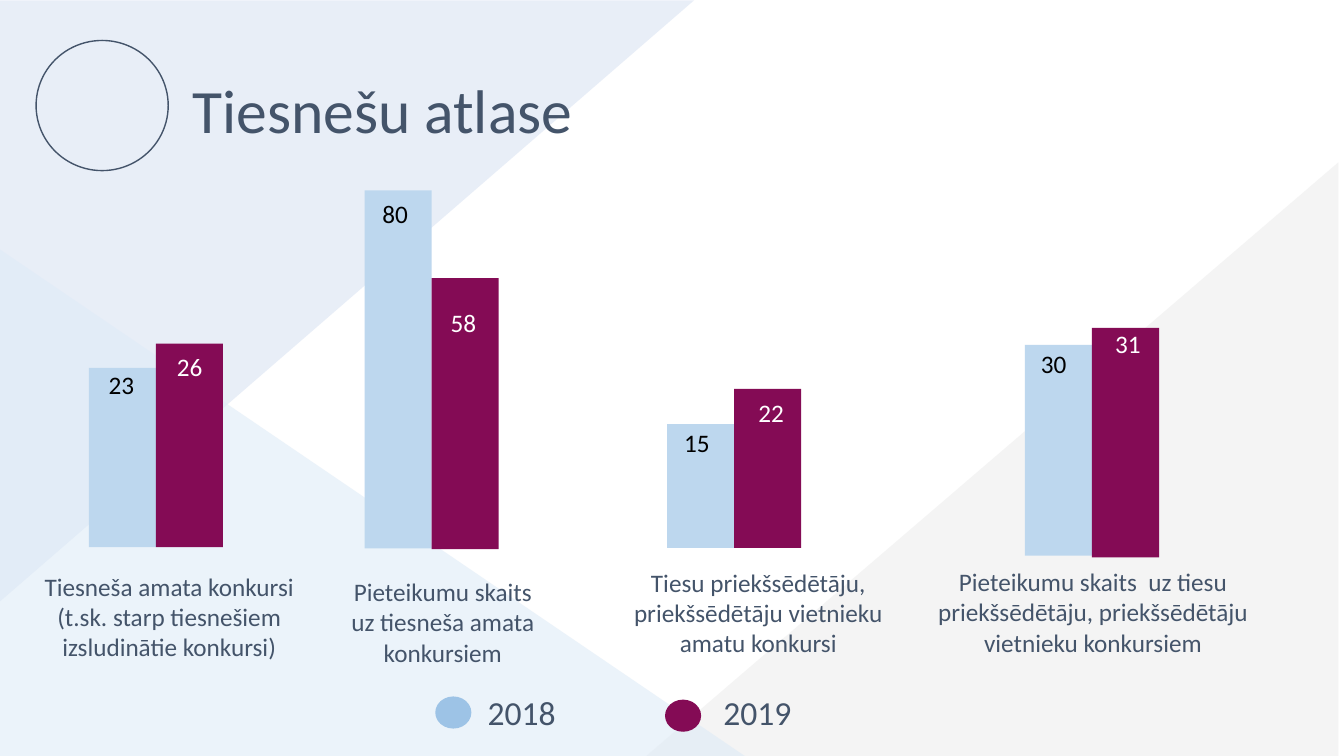
from pptx import Presentation
from pptx import util as u
from pptx.dml.color import RGBColor
from pptx.enum import shapes, text
from pptx.oxml.ns import qn
from lxml import etree

SLATE = RGBColor(0x44, 0x54, 0x6A)
PLUM = RGBColor(0x84, 0x0B, 0x55)
SKY = RGBColor(0xBD, 0xD7, 0xEE)
BLUE = RGBColor(0x9D, 0xC3, 0xE6)
LAVENDER = RGBColor(0xDA, 0xE3, 0xF3)
GREY = RGBColor(0xED, 0xED, 0xED)
ICE = RGBColor(0xDE, 0xEB, 0xF7)
BLACK = RGBColor(0, 0, 0)
WHITE = RGBColor(0xFF, 0xFF, 0xFF)

FONT = "Calibri"
CENTER = text.PP_ALIGN.CENTER
BAR_W = 1.69
VALUE_W, VALUE_H = 1.3, 1.02

GROUPS = [
    ((2.24, 13.79), [(23, 4.52, 0, 0.25, -0.1), (26, 5.13, 0, 0.28, 0.08)],
     (0.58, 14.27, 7.37),
     "Tiesneša amata konkursi (t.sk. starp tiesnešiem izsludinātie konkursi)"),
    ((9.19, 13.82), [(80, 9.02, 0, 0.2, 0.08), (58, 6.83, 0.02, 0.23, 0.61)],
     (8.38, 14.4, 5.56),
     "Pieteikumu skaits uz tiesneša amata konkursiem"),
    ((16.81, 13.81), [(15, 3.12, 0, 0.18, -0.05), (22, 4.01, 0, 0.36, 0.08)],
     (15.54, 14.17, 7.14),
     "Tiesu priekšsēdētāju, priekšsēdētāju vietnieku amatu konkursi"),
    ((25.83, 14), [(30, 5.31, 0, 0.15, -0.03), (31, 5.79, 0.05, 0.33, -0.1)],
     (23.34, 14.15, 8.41),
     "Pieteikumu skaits  uz tiesu priekšsēdētāju, priekšsēdētāju vietnieku konkursiem"),
]


def add_shape(s, kind, box, fill=None, line=None):
    sp = s.shapes.add_shape(kind, *map(u.Cm, box))
    sp.shadow.inherit = False
    if fill is None:
        sp.fill.background()
    else:
        sp.fill.solid()
        sp.fill.fore_color.rgb = fill
    if line is None:
        sp.line.fill.background()
    else:
        sp.line.color.rgb = line
        sp.line.width = u.Pt(1)
    return sp


def add_text(s, box, content, size, color, align=None):
    tf = s.shapes.add_textbox(*map(u.Cm, box)).text_frame
    tf.word_wrap = True
    p = tf.paragraphs[0]
    p.alignment = align
    r = p.add_run()
    r.text = content
    r.font.name = FONT
    r.font.size = u.Pt(size)
    r.font.color.rgb = color
    return tf


def add_corner(s, box, color, rotation):
    x, y, w, h = box
    if rotation % 180:
        x, y, w, h = x + (w - h) / 2, y + (h - w) / 2, h, w
    sp = add_shape(s, shapes.MSO_SHAPE.RIGHT_TRIANGLE, (x, y, w, h), color)
    sp.rotation = rotation
    clr = sp.fill._xPr.find(qn("a:solidFill"))[0]
    etree.SubElement(clr, qn("a:alpha")).set("val", "60000")


def add_background(s):
    add_corner(s, (-0.11, 0.01, 17.6, 15.24), LAVENDER, 90)
    add_corner(s, (14.83, 4.09, 18.9, 16.21), GREY, 270)
    add_corner(s, (-0.13, 6.2, 18.9, 12.85), ICE, 0)


def add_header(s, box):
    x, y, w, h = box
    add_shape(s, shapes.MSO_SHAPE.OVAL, (x, y, 3.33, 3.28), line=SLATE)
    tf = add_text(s, (x + 3.69, y, w - 3.69, h), "Tiesnešu atlase", 44, SLATE)
    tf.vertical_anchor = text.MSO_ANCHOR.MIDDLE
    tf.paragraphs[0].line_spacing = 0.9


def add_bar_group(s, origin, bars, caption_box, caption):
    left, base = origin
    styles = [(SKY, BLACK), (PLUM, WHITE)]
    for i, (value, height, drop, dx, dy) in enumerate(bars):
        fill, color = styles[i]
        x, y = left + i * BAR_W, base + drop - height
        add_shape(s, shapes.MSO_SHAPE.RECTANGLE, (x, y, BAR_W, height), fill)
        add_text(s, (x + dx, y + dy, VALUE_W, VALUE_H), str(value), 18, color)
    add_text(s, (*caption_box, 2.57), caption, 18, SLATE, CENTER)


def add_legend_item(s, box, year, color, dot_dy):
    x, y, w, h = box
    add_shape(s, shapes.MSO_SHAPE.OVAL, (x, y + dot_dy, 0.91, 0.81), color)
    add_text(s, (x + w - 2.77, y, 2.77, h), year, 24, SLATE)


def main():
    prs = Presentation()
    prs.slide_width, prs.slide_height = u.Cm(33.87), u.Cm(19.05)
    s = prs.slides.add_slide(prs.slide_layouts[6])
    add_background(s)
    add_header(s, (0.91, 1.02, 30.64, 3.68))
    for group in GROUPS:
        add_bar_group(s, *group)
    add_legend_item(s, (10.97, 17.3, 3.84, 1.27), "2018", BLUE, 0.25)
    add_legend_item(s, (16.76, 17.32, 3.99, 1.27), "2019", PLUM, 0.31)
    prs.save("out.pptx")


if __name__ == "__main__":
    main()
